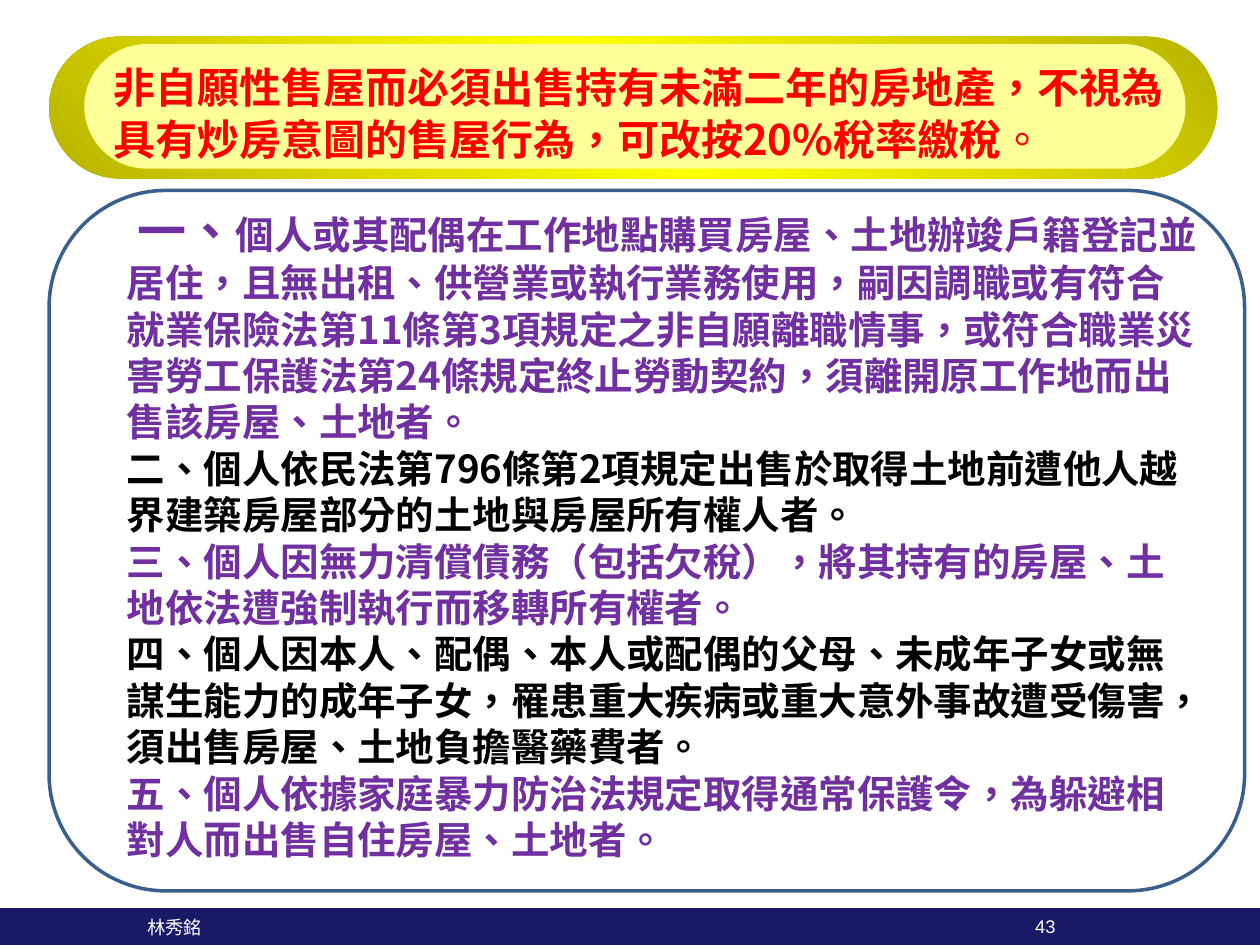
from copy import deepcopy
from dataclasses import dataclass

from pptx import Presentation
from pptx.dml.color import RGBColor
from pptx.enum.lang import MSO_LANGUAGE_ID
from pptx.enum.shapes import MSO_SHAPE
from pptx.enum.text import MSO_ANCHOR, PP_ALIGN
from pptx.oxml.ns import qn
from pptx.util import Cm, Pt

ROUND = MSO_SHAPE.ROUNDED_RECTANGLE
RECT = MSO_SHAPE.RECTANGLE
LEFT = PP_ALIGN.LEFT
TOP, MIDDLE = MSO_ANCHOR.TOP, MSO_ANCHOR.MIDDLE
TAIWAN = MSO_LANGUAGE_ID.TRADITIONAL_CHINESE


@dataclass(frozen=True)
class Theme:
    # Colours
    red: str = "FF0000"
    purple: str = "7030A0"
    black: str = "000000"
    white: str = "FFFFFF"
    cream: str = "FFFF99"
    gold: str = "B8B400"
    yellow: str = "FFFF00"
    navy: str = "191966"
    edge: str = "3A5F8C"
    # Fonts
    main: str = "Noto Sans CJK SC"
    mark: str = "Noto Sans CJK TC"
    small: str = "Arial"
    # Type sizes and line pitch in points
    head: float = 24
    lead: float = 28
    body: float = 22
    foot: float = 10.5
    head_gap: float = 29.7
    body_gap: float = 26.5


THEME = Theme()

TITLE = "非自願性售屋而必須出售持有未滿二年的房地產，不視為具有炒房意圖的售屋行為，可改按20%稅率繳稅"
FIRST = (
    "個人或其配偶在工作地點購買房屋、土地辦竣戶籍登記並居住，且無出租、供營業或執行業務使用，"
    "嗣因調職或有符合就業保險法第11條第3項規定之非自願離職情事，"
    "或符合職業災害勞工保護法第24條規定終止勞動契約，須離開原工作地而出售該房屋、土地者。"
)
RULES = [
    "二、個人依民法第796條第2項規定出售於取得土地前遭他人越界建築房屋部分的土地與房屋所有權人者。",
    "三、個人因無力清償債務（包括欠稅），將其持有的房屋、土地依法遭強制執行而移轉所有權者。",
    "四、個人因本人、配偶、本人或配偶的父母、未成年子女或無謀生能力的成年子女，"
    "罹患重大疾病或重大意外事故遭受傷害，須出售房屋、土地負擔醫藥費者。",
    "五、個人依據家庭暴力防治法規定取得通常保護令，為躲避相對人而出售自住房屋、土地者。",
]


def paint(fill, hue):
    fill.solid()
    fill.fore_color.rgb = RGBColor.from_string(hue)


def add_form(shapes, kind, box, hue=None, edge=None):
    form = shapes.add_shape(kind, *map(Cm, box))
    form.shadow.inherit = False
    if hue:
        paint(form.fill, hue)
    else:
        form.fill.background()
    if edge:
        paint(form.line.fill, edge)
        form.line.width = Pt(2)
    else:
        form.line.fill.background()
    return form


def blend(form, hues, angle):
    """Fill with evenly spaced colour stops."""
    fill = form.fill
    fill.gradient()
    fill.gradient_angle = angle
    stops = form._element.spPr.find(".//" + qn("a:gsLst"))
    while len(stops) < len(hues):
        stops.append(deepcopy(stops[0]))
    for i, (stop, hue) in enumerate(zip(fill.gradient_stops, hues)):
        stop.color.rgb = RGBColor.from_string(hue)
        stop.position = i / (len(hues) - 1)


def set_frame(form, anchor=TOP, left=0.25, top=0.13):
    frame = form.text_frame
    frame.word_wrap = True
    frame.vertical_anchor = anchor
    frame.margin_left, frame.margin_top = Cm(left), Cm(top)
    return frame


def add_box(shapes, box, **look):
    return set_frame(shapes.add_textbox(*map(Cm, box)), **look)


def add_para(frame, gap=None):
    first = frame.paragraphs[0]
    para = frame.add_paragraph() if first.runs else first
    para.alignment = LEFT
    if gap:
        para.line_spacing = Pt(gap)
    return para


def add_run(para, text, size, hue, face=THEME.main, bold=True):
    run = para.add_run()
    run.text = text
    font = run.font
    font.size, font.bold, font.name = Pt(size), bold, face
    font.language_id = TAIWAN
    paint(font.fill, hue)
    # East Asian glyphs take their own font entry
    east = deepcopy(font._element.find(qn("a:latin")))
    east.tag = qn("a:ea")
    font._element.find(qn("a:latin")).addnext(east)


def add_title(shapes):
    group = shapes.add_group_shape().shapes
    band = add_form(group, ROUND, (0.99, 0.74, 23.55, 2.86), THEME.gold)
    blend(band, (THEME.gold, THEME.yellow, THEME.gold), 45)
    plate = add_form(group, ROUND, (1.7, 0.89, 22.2, 2.51), THEME.cream)
    for form in (band, plate):
        form.adjustments[0] = 0.5
    para = add_para(add_box(shapes, (2.03, 1.04, 21.95, 2.54), top=0.17),
                    THEME.head_gap)
    add_run(para, TITLE, THEME.head, THEME.red)
    add_run(para, "。", THEME.head, THEME.red, THEME.mark, False)


def add_foot(shapes):
    bar = add_form(shapes, RECT, (0, 18.31, 25.4, 0.74), THEME.navy)
    name = set_frame(bar, MIDDLE, left=2.97)
    page = add_box(shapes, (20.62, 18.29, 1.35, 0.76), anchor=MIDDLE)
    for frame, text in ((name, "林秀銘"), (page, "43")):
        add_run(add_para(frame), text, THEME.foot, THEME.white,
                THEME.small, False)


def add_body(shapes):
    frame = add_box(shapes, (2.31, 3.84, 22.17, 14.63), top=0.45)
    para = add_para(frame, THEME.body_gap)
    para._p.get_or_add_pPr().set("indent", str(Cm(0.22)))
    add_run(para, "一、", THEME.lead, THEME.purple)
    add_run(para, FIRST, THEME.body, THEME.purple)
    for i, rule in enumerate(RULES):
        hue = THEME.purple if i % 2 else THEME.black
        add_run(add_para(frame, THEME.body_gap), rule, THEME.body, hue)
    add_form(shapes, ROUND, (0.99, 3.84, 24.1, 14.12), edge=THEME.edge)


def main():
    deck = Presentation()
    deck.slide_width, deck.slide_height = Cm(25.4), Cm(19.05)
    shapes = deck.slides.add_slide(deck.slide_layouts[6]).shapes
    add_title(shapes)
    add_foot(shapes)
    add_body(shapes)
    deck.save("out.pptx")


if __name__ == "__main__":
    main()
